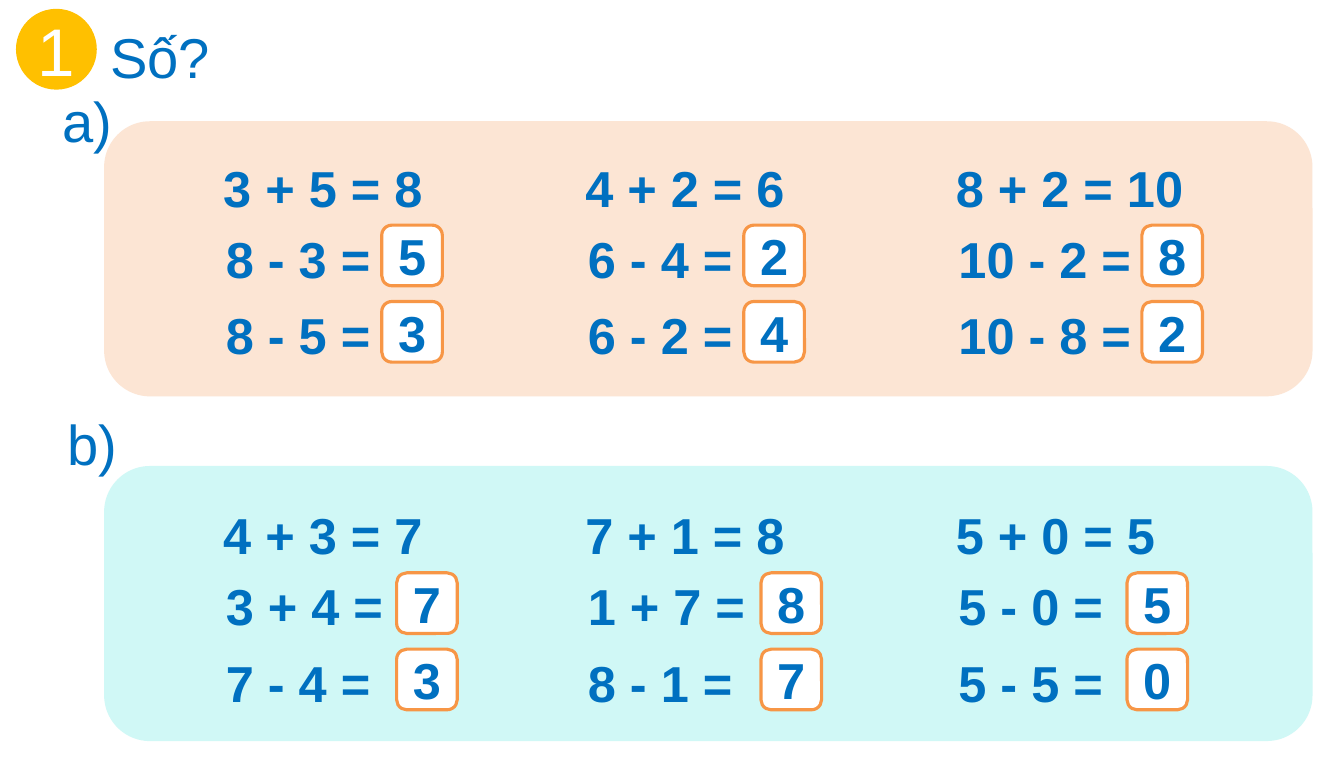
"""Build a slide of linked addition and subtraction exercises."""
import pptx
import pptx.util
import pptx.dml.color
import pptx.enum.shapes
import pptx.enum.text

Pt = pptx.util.Pt
SHAPES = pptx.enum.shapes.MSO_SHAPE
ALIGN = pptx.enum.text.PP_ALIGN
ANCHOR = pptx.enum.text.MSO_ANCHOR
COLORS = {
    "blue": "0070C0",
    "white": "FFFFFF",
    "gold": "FFC000",
    "orange": "F79646",
    "peach": "FCE5D4",
    "mint": "D0F8F6",
}

deck = pptx.Presentation()
deck.slide_width, deck.slide_height = Pt(957.6), Pt(540)
page = deck.slides.add_slide(deck.slide_layouts[5])


def write(box, text, size=36, color="blue", bold=False, align=ALIGN.JUSTIFY, anchor=ANCHOR.TOP):
    frame = box.text_frame
    frame.word_wrap = True
    frame.vertical_anchor = anchor
    para = frame.paragraphs[0]
    para.alignment = align
    span = para.add_run()
    span.text = text
    span.font.name = "Arial"
    span.font.size = Pt(size)
    span.font.bold = bold
    span.font.color.rgb = pptx.dml.color.RGBColor.from_string(COLORS[color])


def add_filled(kind, left, top, width, height, fill, line=None):
    shape = page.shapes.add_shape(kind, Pt(left), Pt(top), Pt(width), Pt(height))
    shape.shadow.inherit = False
    shape.fill.solid()
    shape.fill.fore_color.rgb = pptx.dml.color.RGBColor.from_string(COLORS[fill])
    if line:
        shape.line.color.rgb = pptx.dml.color.RGBColor.from_string(COLORS[line])
        shape.line.width = Pt(2.25)
    else:
        shape.line.fill.background()
    return shape


title = page.shapes.title
title.left, title.top, title.width, title.height = Pt(71.3), Pt(12.2), Pt(828), Pt(55.4)
write(title, "Số?", size=40)

badge = add_filled(SHAPES.OVAL, 11.4, 6.3, 57.6, 57.6, "gold")
write(badge, "1", size=48, color="white", align=ALIGN.CENTER, anchor=ANCHOR.MIDDLE)

column_lefts = [152, 410, 674]
row_tops = [108, 158.6, 213]
parts = [
    {
        "label": "a)", "label_at": (37.4, 58.3), "panel_top": 86.4, "fill": "peach",
        "shift": 0, "answer_lefts": [272, 530, 813.6],
        "columns": [
            [("3 + 5 = 8", ""), ("8 - 3 =", "5"), ("8 - 5 =", "3")],
            [("4 + 2 = 6", ""), ("6 - 4 =", "2"), ("6 - 2 =", "4")],
            [("8 + 2 = 10", ""), ("10 - 2 =", "8"), ("10 - 8 =", "2")],
        ],
    },
    {
        "label": "b)", "label_at": (41, 288), "panel_top": 332, "fill": "mint",
        "shift": 247.7, "answer_lefts": [282.6, 542.2, 803],
        "columns": [
            [("4 + 3 = 7", ""), ("3 + 4 =", "7"), ("7 - 4 =", "3")],
            [("7 + 1 = 8", ""), ("1 + 7 =", "8"), ("8 - 1 =", "7")],
            [("5 + 0 = 5", ""), ("5 - 0 =", "5"), ("5 - 5 =", "0")],
        ],
    },
]

for part in parts:
    add_filled(SHAPES.ROUNDED_RECTANGLE, 74.2, part["panel_top"], 861, 196, part["fill"])
    label_left, label_top = part["label_at"]
    label = page.shapes.add_textbox(Pt(label_left), Pt(label_top), Pt(66), Pt(55.4))
    write(label, part["label"], size=40)

    for left, answer_left, column in zip(column_lefts, part["answer_lefts"], part["columns"]):
        for row_top, (equation, answer) in zip(row_tops, column):
            top = row_top + part["shift"]
            indent = 1.8 if answer else 0
            box = page.shapes.add_textbox(Pt(left + indent), Pt(top), Pt(205), Pt(51))
            write(box, equation, bold=True)
            if answer:
                square = add_filled(SHAPES.ROUNDED_RECTANGLE, answer_left, top + 1.8,
                                    43.2, 43.2, "white", line="orange")
                write(square, answer, bold=True, align=ALIGN.CENTER, anchor=ANCHOR.MIDDLE)

deck.save("out.pptx")
